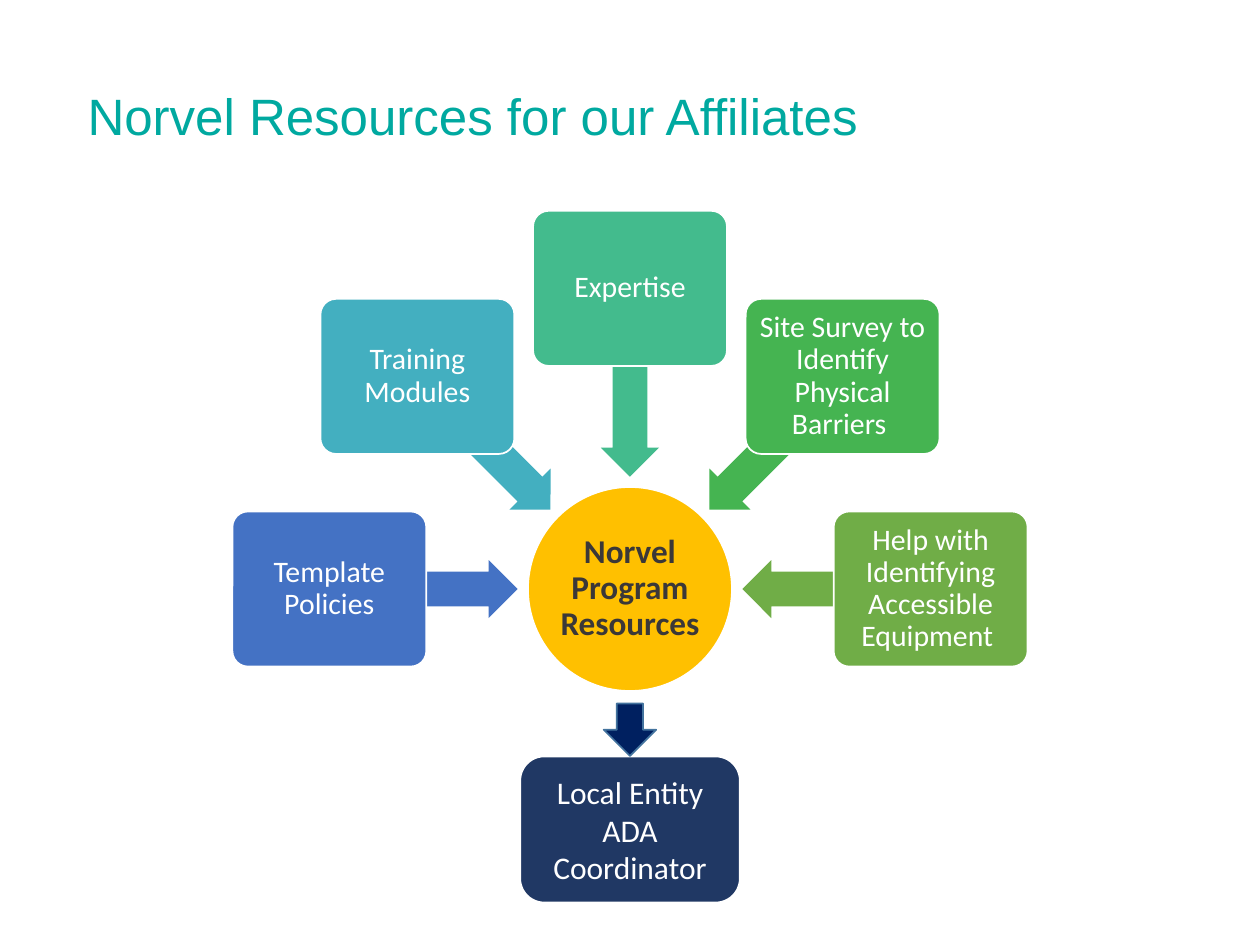
from math import cos, radians, sin

from pptx import Presentation
from pptx.dml.color import RGBColor
from pptx.enum.shapes import MSO_SHAPE
from pptx.enum.text import MSO_ANCHOR, MSO_AUTO_SIZE, PP_ALIGN
from pptx.util import Pt

HUB_X, HUB_Y = 360, 336.6
BOX_RADIUS, ARROW_RADIUS = 171.8, 117.8
WHITE = "FFFFFF"

# Resources clockwise around the upper half of the hub, from left to right
RESOURCES = [
    ("Template Policies", "4472C4"),
    ("Training Modules", "43AFC0"),
    ("Expertise", "43BB8D"),
    ("Site Survey to Identify Physical Barriers ", "45B451"),
    ("Help with Identifying Accessible Equipment ", "70AD47"),
]


def color(hex_string):
    return RGBColor.from_string(hex_string)


class Diagram:
    title_font = "Arial"
    body_font = "Calibri"

    def __init__(self, prs):
        self.slide = prs.slides.add_slide(prs.slide_layouts[5])

    def label(self, frame, text, size, font, ink, bold=False, align=PP_ALIGN.CENTER,
              anchor=MSO_ANCHOR.MIDDLE, inset=None, spacing=None):
        frame.word_wrap = True
        frame.auto_size = MSO_AUTO_SIZE.NONE
        frame.vertical_anchor = anchor
        if inset is not None:
            frame.margin_left = frame.margin_right = Pt(inset)
            frame.margin_top = frame.margin_bottom = Pt(inset)
        paragraph = frame.paragraphs[0]
        paragraph.alignment = align
        paragraph.line_spacing = spacing
        run = paragraph.add_run()
        run.text = text
        run.font.size = Pt(size)
        run.font.name = font
        run.font.bold = bold
        run.font.color.rgb = color(ink)

    def title(self, text, left, top, width, height):
        title = self.slide.shapes.title
        title.left, title.top = Pt(left), Pt(top)
        title.width, title.height = Pt(width), Pt(height)
        self.label(title.text_frame, text, 29.2, self.title_font, "00A9A0",
                   align=PP_ALIGN.LEFT, anchor=MSO_ANCHOR.TOP, inset=0, spacing=0.9)

    def shape(self, kind, center_x, center_y, width, height, fill,
              line=None, line_width=1, adjustments=(), rotation=0):
        shape = self.slide.shapes.add_shape(
            kind, Pt(center_x - width / 2), Pt(center_y - height / 2), Pt(width), Pt(height))
        shape.shadow.inherit = False
        shape.rotation = rotation
        for index, value in enumerate(adjustments):
            shape.adjustments[index] = value
        shape.fill.solid()
        shape.fill.fore_color.rgb = color(fill)
        if line:
            shape.line.color.rgb = color(line)
            shape.line.width = Pt(line_width)
        else:
            shape.line.fill.background()
        return shape

    def hub(self, text):
        circle = self.shape(MSO_SHAPE.OVAL, HUB_X, HUB_Y, 116.6, 116.6, "FFC000", WHITE)
        self.label(circle.text_frame, text, 19, self.body_font, "3B3838",
                   bold=True, inset=0.9, spacing=0.9)

    def resource(self, text, fill, angle):
        across, down = cos(radians(angle)), sin(radians(angle))
        self.shape(MSO_SHAPE.LEFT_ARROW, HUB_X + ARROW_RADIUS * across,
                   HUB_Y + ARROW_RADIUS * down, 107.2, 33.2, fill,
                   adjustments=(0.6, 0.5), rotation=angle)
        box = self.shape(MSO_SHAPE.ROUNDED_RECTANGLE, HUB_X + BOX_RADIUS * across,
                         HUB_Y + BOX_RADIUS * down, 110.8, 88.6, fill, WHITE,
                         adjustments=(0.1,))
        self.label(box.text_frame, text, 17, self.body_font, WHITE, inset=2.6, spacing=0.9)

    def outcome(self, text):
        box = self.shape(MSO_SHAPE.ROUNDED_RECTANGLE, HUB_X, 474, 126, 84, "203864", WHITE, 1.5)
        self.label(box.text_frame, text, 18, self.body_font, WHITE)
        self.shape(MSO_SHAPE.DOWN_ARROW, HUB_X, 417, 30, 30, "002060", "43739E")


def main():
    prs = Presentation()
    prs.slide_width, prs.slide_height = Pt(720), Pt(540)
    diagram = Diagram(prs)
    diagram.title("Norvel Resources for our Affiliates", 50, 52, 620, 91)

    # Hub with the resources that feed it
    diagram.hub("Norvel Program Resources")
    for step, (text, fill) in enumerate(RESOURCES):
        diagram.resource(text, fill, 180 + 45 * step)

    # Local coordinator below the hub
    diagram.outcome("Local Entity ADA Coordinator")
    prs.save("out.pptx")


if __name__ == "__main__":
    main()
